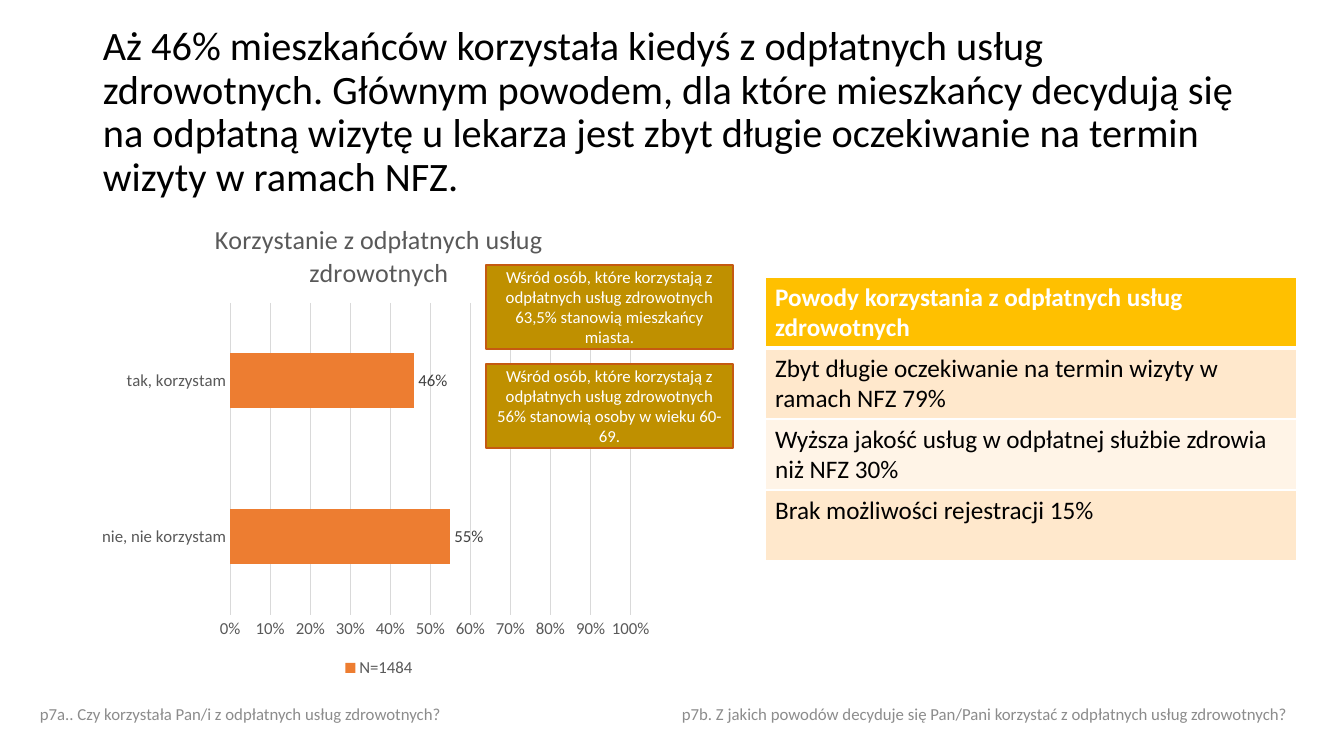
from lxml import etree
from pptx import Presentation
from pptx import util as u
from pptx.chart import data
from pptx.dml import color as dml
from pptx.enum import chart as ch, shapes, text
from pptx.oxml import ns, parse_xml

PX = 914400 / 100.8
COLORS = {
    "black": "000000", "white": "FFFFFF", "axis": "595959", "label": "404040",
    "grid": "D9D9D9", "note": "8C8C8C", "bar": "ED7D31", "callout": "BF9000",
    "callout_line": "C55A11", "header": "FFC000", "band": "FFE8CC", "band_light": "FFF4E7",
}
FONT = "Calibri"


def px(length):
    return u.Emu(round(length * PX))


def rgb(name):
    return dml.RGBColor.from_string(COLORS[name])


def set_font(font, size, color, bold=False):
    font.name, font.size, font.bold = FONT, u.Pt(size), bold
    font.color.rgb = rgb(color)


def write(frame, content, size=12, color="black", bold=False, align=None,
          anchor=text.MSO_ANCHOR.MIDDLE, spacing=None):
    frame.word_wrap = True
    frame.vertical_anchor = anchor
    paragraph = frame.paragraphs[0]
    paragraph.alignment = align
    paragraph.line_spacing = spacing
    run = paragraph.add_run()
    run.text = content
    set_font(run.font, size, color, bold)


def border_cell(cell, bottom_width):
    """Draw white lines on all four sides; call before the cell gets its fill."""
    properties = cell._tc.get_or_add_tcPr()
    for side in "LRTB":
        width = u.Pt(bottom_width if side == "B" else 1)
        line = etree.SubElement(properties, ns.qn(f"a:ln{side}"), w=str(width))
        fill = etree.SubElement(line, ns.qn("a:solidFill"))
        etree.SubElement(fill, ns.qn("a:srgbClr"), val=COLORS["white"])


def place_plot(chart, x, y, w, h):
    """Fix the inner plot area, given in fractions of the chart."""
    plot_area = chart._chartSpace.chart.plotArea
    for layout in plot_area.findall(ns.qn("c:layout")):
        plot_area.remove(layout)
    values = "".join(f'<c:{tag} val="{value}"/>' for tag, value in
                     [("layoutTarget", "inner"), ("xMode", "edge"), ("yMode", "edge"),
                      ("x", x), ("y", y), ("w", w), ("h", h)])
    plot_area.insert(0, parse_xml(
        f'<c:layout {ns.nsdecls("c")}><c:manualLayout>{values}</c:manualLayout></c:layout>'))


class SlideBuilder:
    def __init__(self, presentation):
        self.slide = presentation.slides.add_slide(presentation.slide_layouts[6])

    def text_box(self, box, content, **style):
        shape = self.slide.shapes.add_textbox(*map(px, box))
        write(shape.text_frame, content, **style)

    def callout(self, box, content):
        shape = self.slide.shapes.add_shape(shapes.MSO_SHAPE.RECTANGLE, *map(px, box))
        shape.shadow.inherit = False
        shape.fill.solid()
        shape.fill.fore_color.rgb = rgb("callout")
        shape.line.color.rgb = rgb("callout_line")
        shape.line.width = u.Pt(1)
        write(shape.text_frame, content, color="white", align=text.PP_ALIGN.CENTER)

    def table(self, box, rows):
        shape = self.slide.shapes.add_table(len(rows), 1, *map(px, box))
        for index, content in enumerate(rows):
            header = index == 0
            cell = shape.table.cell(index, 0)
            border_cell(cell, 3 if header else 1)
            cell.fill.solid()
            cell.fill.fore_color.rgb = rgb(
                "header" if header else "band" if index % 2 else "band_light")
            write(cell.text_frame, content, size=18, bold=header,
                  color="white" if header else "black", anchor=None)

    def bar_chart(self, box, title, series_name, shares):
        chart_data = data.CategoryChartData(number_format="0%")
        chart_data.categories = list(shares)
        chart_data.add_series(series_name, list(shares.values()))
        chart = self.slide.shapes.add_chart(
            ch.XL_CHART_TYPE.BAR_CLUSTERED, *map(px, box), chart_data).chart
        set_font(chart.font, 12, "axis")
        chart.has_title = True
        write(chart.chart_title.text_frame, title, size=18.6, color="axis")
        chart.chart_title.include_in_layout = False
        chart.has_legend = True
        chart.legend.position = ch.XL_LEGEND_POSITION.BOTTOM
        chart.legend.include_in_layout = False
        set_font(chart.legend.font, 12, "axis")
        self.style_axes(chart)
        self.style_bars(chart.plots[0])
        place_plot(chart, 0.24, 0.21, 0.7, 0.65)

    def style_axes(self, chart):
        values, categories = chart.value_axis, chart.category_axis
        for axis in (values, categories):
            axis.major_tick_mark = axis.minor_tick_mark = ch.XL_TICK_MARK.NONE
            set_font(axis.tick_labels.font, 12, "axis")
        values.minimum_scale, values.maximum_scale, values.major_unit = 0, 1, 0.1
        values.tick_labels.number_format = "0%"
        values.tick_labels.number_format_is_linked = False
        values.format.line.fill.background()
        for line in (values.major_gridlines.format.line, categories.format.line):
            line.color.rgb = rgb("grid")
            line.width = u.Pt(0.75)

    def style_bars(self, plot):
        plot.gap_width = 182
        plot.vary_by_categories = False
        series = plot.series[0]
        series.format.fill.solid()
        series.format.fill.fore_color.rgb = rgb("bar")
        labels = series.data_labels
        labels.show_value = True
        labels.position = ch.XL_LABEL_POSITION.OUTSIDE_END
        labels.number_format = "0%"
        labels.number_format_is_linked = False
        set_font(labels.font, 12, "label")


def main():
    presentation = Presentation()
    presentation.slide_width, presentation.slide_height = px(1344), px(756)
    builder = SlideBuilder(presentation)
    builder.text_box(
        (93, 40, 1159, 146),
        "Aż 46% mieszkańców korzystała kiedyś z odpłatnych usług zdrowotnych. "
        "Głównym powodem, dla które mieszkańcy decydują się na odpłatną wizytę u lekarza "
        "jest zbyt długie oczekiwanie na termin wizyty w ramach NFZ.",
        size=28.8, spacing=0.9)
    builder.bar_chart(
        (93, 202, 572, 480), "Korzystanie z odpłatnych usług zdrowotnych", "N=1484",
        {"nie, nie korzystam": 0.55, "tak, korzystam": 0.46})
    builder.table((765, 277, 532, 284), [
        "Powody korzystania z odpłatnych usług zdrowotnych",
        "Zbyt długie oczekiwanie na termin wizyty w ramach NFZ 79%",
        "Wyższa jakość usług w odpłatnej służbie zdrowia niż NFZ 30%",
        "Brak możliwości rejestracji 15%",
    ])
    findings = ["63,5% stanowią mieszkańcy miasta.", "56% stanowią osoby w wieku 60-69."]
    for index, finding in enumerate(findings):
        builder.callout(
            (486, 265 + 99 * index, 247, 84),
            f"Wśród osób, które korzystają z odpłatnych usług zdrowotnych {finding}")
    for left, width, question in [
        (30, 684, "p7a.. Czy korzystała Pan/i z odpłatnych usług zdrowotnych?"),
        (672, 644, "p7b. Z jakich powodów decyduje się Pan/Pani korzystać "
                   "z odpłatnych usług zdrowotnych?"),
    ]:
        builder.text_box((left, 694, width, 40), question, color="note")
    presentation.save("out.pptx")


if __name__ == "__main__":
    main()
